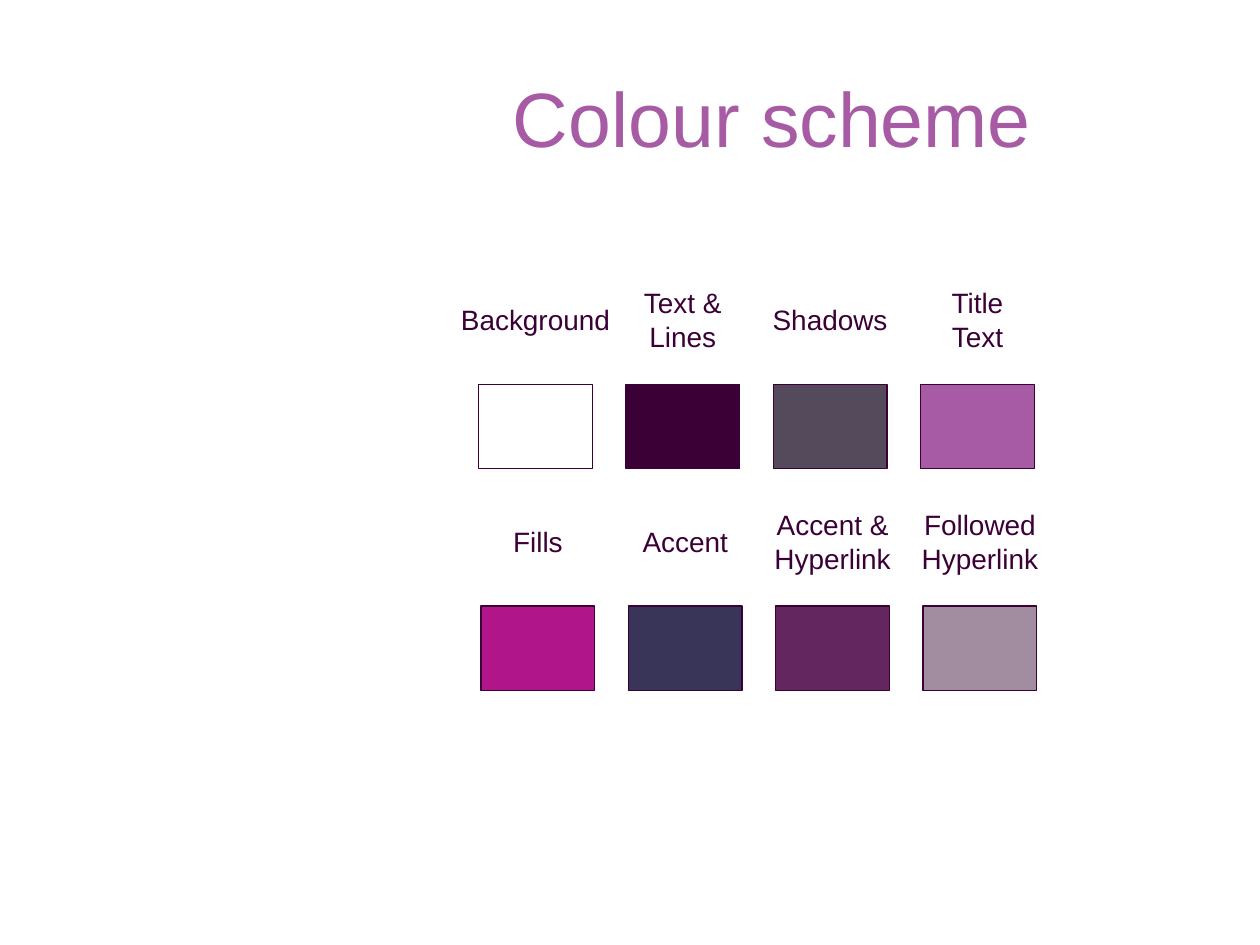
from dataclasses import dataclass

from pptx import Presentation
from pptx.dml import color
from pptx.enum import shapes, text
from pptx.util import Cm, Pt


@dataclass(frozen=True)
class Theme:
    font: str = "Arial"
    back: str = "FFFFFF"
    ink: str = "3B0136"
    title: str = "A65BA4"
    head: int = 44
    label: int = 16
    line: float = 0.75


THEME = Theme()
PITCH = 2.97
WIDE, HIGH = 2.29, 1.7
DROP = 2.11
MID = 0.81
LINES = {1: 0.94, 2: 1.62}

TOP = [
    ("Background", 3.53, THEME.back),
    ("Text &\nLines", 2.13, THEME.ink),
    ("Shadows", 2.84, "554A5C"),
    ("Title\vText", 1.6, THEME.title),
]
LOW = [
    ("Fills", 1.52, "B01689"),
    ("Accent", 2.24, "393558"),
    ("Accent &\nHyperlink", 2.87, "64265E"),
    ("Followed\nHyperlink", 2.87, "A28DA0"),
]


def rgb(code):
    return color.RGBColor.from_string(code)


def write(frame, words, size, tint, wrap=True, anchor=text.MSO_ANCHOR.TOP,
          fit=text.MSO_AUTO_SIZE.NONE):
    frame.text = words
    frame.word_wrap = wrap
    frame.auto_size = fit
    frame.vertical_anchor = anchor
    for para in frame.paragraphs:
        para.alignment = text.PP_ALIGN.CENTER
        for run in para.runs:
            run.font.name = THEME.font
            run.font.size = Pt(size)
            run.font.color.rgb = rgb(tint)


def place(shape, box):
    shape.left, shape.top, shape.width, shape.height = map(Cm, box)


def header(slide, box, words):
    title = slide.shapes.title
    place(title, box)
    write(title.text_frame, words, THEME.head, THEME.title,
          anchor=text.MSO_ANCHOR.MIDDLE)


def swatch(slide, box, fill):
    rect = slide.shapes.add_shape(shapes.MSO_SHAPE.RECTANGLE, *map(Cm, box))
    rect.shadow.inherit = False
    rect.fill.solid()
    rect.fill.fore_color.rgb = rgb(fill)
    rect.line.color.rgb = rgb(THEME.ink)
    rect.line.width = Pt(THEME.line)


def label(slide, x, y, width, words):
    high = LINES[len(words.splitlines())]
    box = (x - width / 2, y - high / 2, width, high)
    area = slide.shapes.add_textbox(*map(Cm, box))
    write(area.text_frame, words, THEME.label, THEME.ink, wrap=False,
          fit=text.MSO_AUTO_SIZE.SHAPE_TO_FIT_TEXT)


def palette(slide, left, top, items):
    for col, (words, width, fill) in enumerate(items):
        x = left + col * PITCH
        swatch(slide, (x, top + DROP, WIDE, HIGH), fill)
        label(slide, x + WIDE / 2, top + MID, width, words)


def main():
    deck = Presentation()
    deck.slide_width, deck.slide_height = Cm(25.4), Cm(19.05)
    slide = deck.slides.add_slide(deck.slide_layouts[5])
    slide.background.fill.solid()
    slide.background.fill.fore_color.rgb = rgb(THEME.back)
    header(slide, (6.99, 0.76, 17.15, 3.18), "Colour scheme")
    palette(slide, 9.65, 5.64, TOP)
    palette(slide, 9.7, 10.11, LOW)
    deck.save("out.pptx")


if __name__ == "__main__":
    main()
